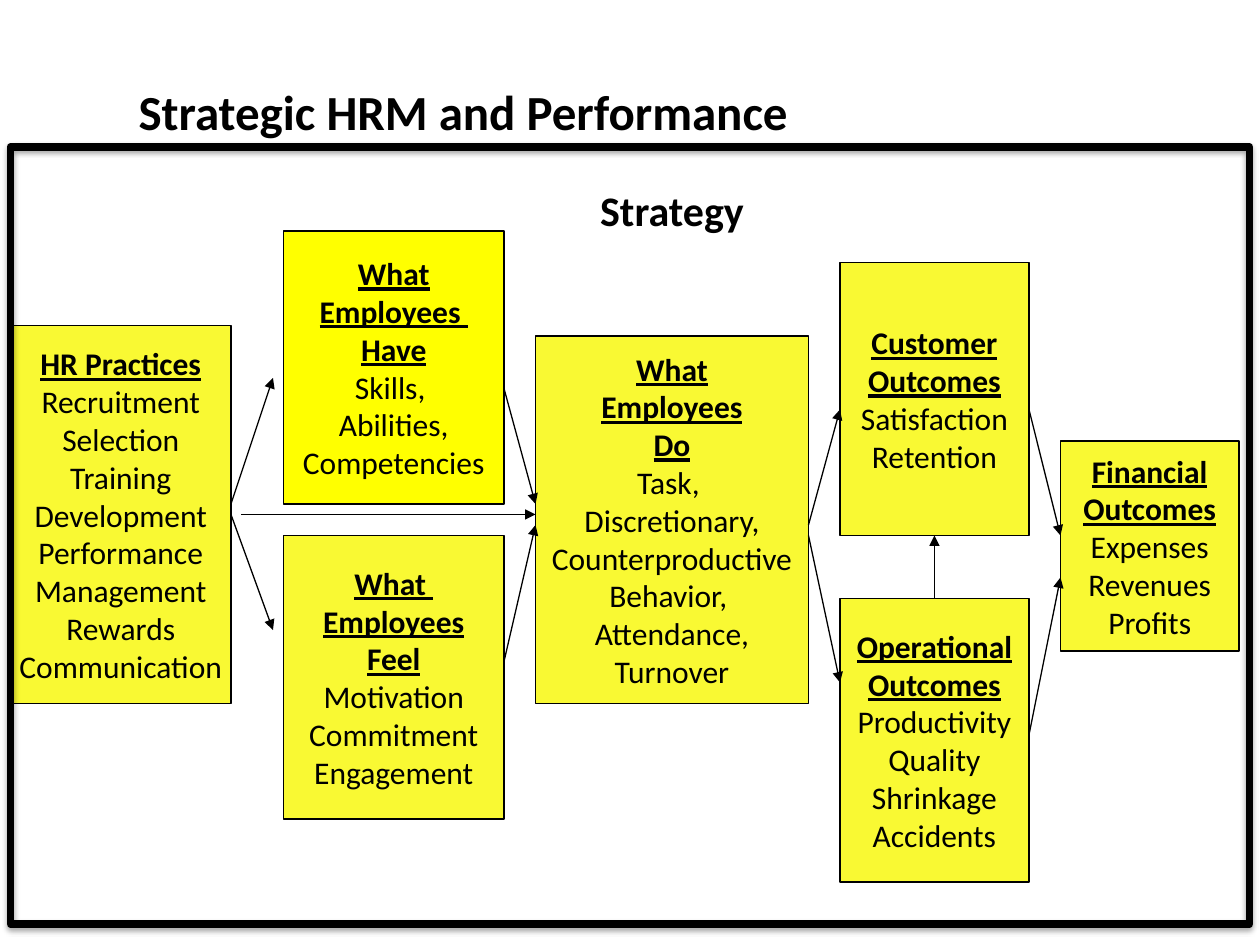
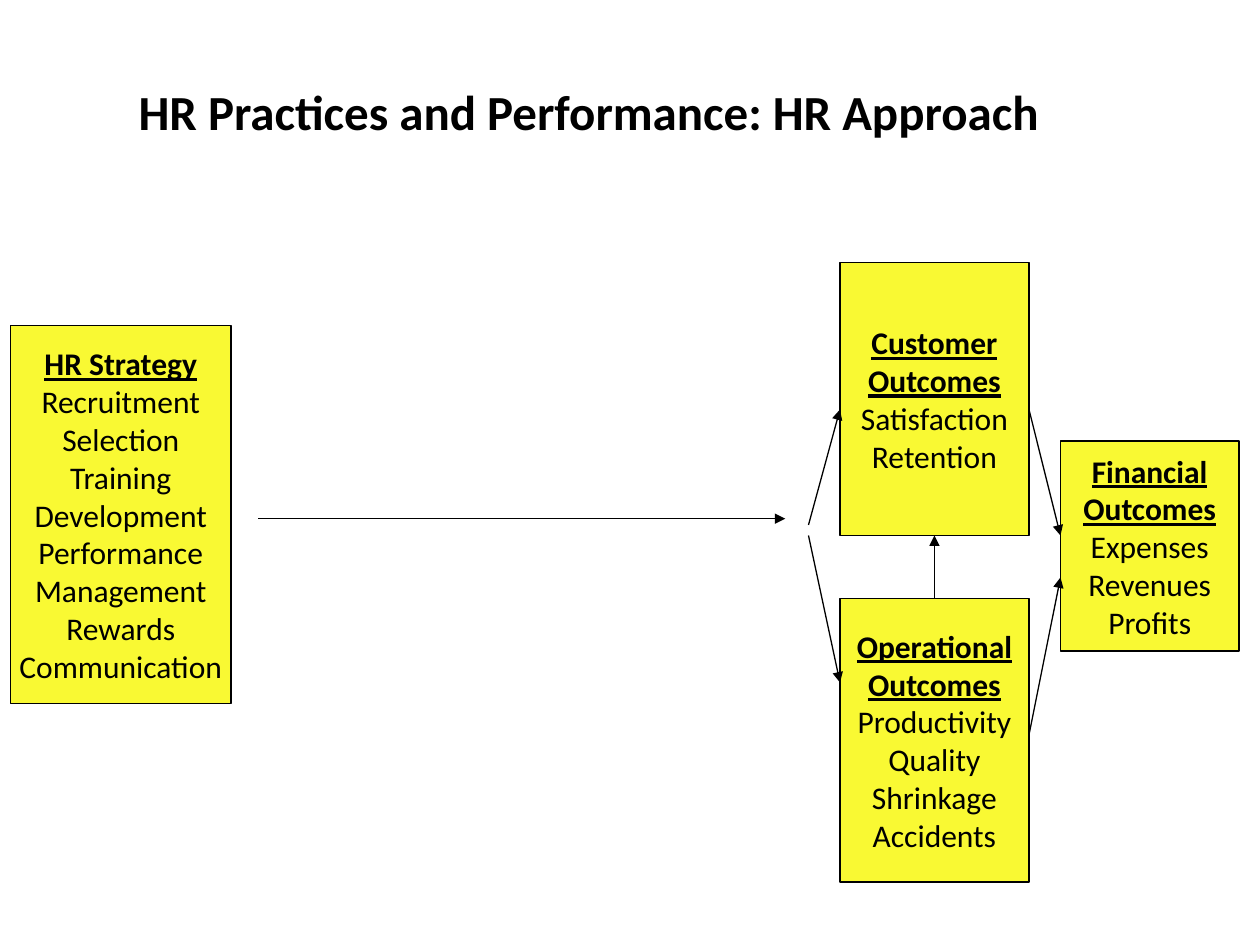
from dataclasses import dataclass

from lxml import etree
from pptx import Presentation
from pptx import util as u
from pptx.dml.color import RGBColor
from pptx.enum import shapes, text
from pptx.oxml.ns import qn


@dataclass(frozen=True)
class Theme:
    """Colours, font, type sizes and line widths of the deck."""
    ink: str = "000000"
    gold: str = "F9F933"
    bright: str = "FFFF00"
    font: str = "Calibri"
    title: int = 28
    label: int = 24
    body: int = 18
    thin: float = 0.75
    thick: float = 4.5


THEME = Theme()
WIDTH, HEIGHT = u.Inches(10), u.Inches(7.5)
COLS, ROWS = 120, 90
TITLE = (12, 7.2, 105, 6.8)
HR = (1, 31, 21, 36)
STAFF = (22, 22, 55, 56)
RESULTS = (77, 25, 41, 59)
FRAME = (1, 14, 118, 74)
TASKS = ["Recruitment", "Selection", "Training", "Development", "Performance",
         "Management", "Rewards", "Communication"]


def col(count):
    """Turn grid columns into a length."""
    return u.Emu(round(WIDTH * count / COLS))


def row(count):
    """Turn grid rows into a length."""
    return u.Emu(round(HEIGHT * count / ROWS))


def rect(box):
    """Turn a grid box into left, top, width and height."""
    x, y, w, h = box
    return col(x), row(y), col(w), row(h)


def shift(area, box):
    """Move a box from the corner of its area to the slide's grid."""
    return (area[0] + box[0], area[1] + box[1], *box[2:])


def write(frame, lines, size=THEME.body, bold=False, heads=0, wrap=True,
          align=text.PP_ALIGN.CENTER, anchor=text.MSO_ANCHOR.TOP):
    """Fill a text frame; the first heads lines are bold and underlined."""
    frame.word_wrap = wrap
    frame.auto_size = text.MSO_AUTO_SIZE.NONE
    frame.vertical_anchor = anchor
    for i, line in enumerate(lines):
        para = frame.paragraphs[0] if i == 0 else frame.add_paragraph()
        para.alignment = align
        run = para.add_run()
        run.text = line
        font = run.font
        font.name, font.size = THEME.font, u.Pt(size)
        font.bold = bold or i < heads
        font.underline = i < heads
        font.color.rgb = RGBColor.from_string(THEME.ink)


def block(slide, box, fill=None, width=THEME.thin):
    """Add an outlined rectangle, filled if a colour is given."""
    shape = slide.shapes.add_shape(shapes.MSO_SHAPE.RECTANGLE, *rect(box))
    shape.shadow.inherit = False
    if fill:
        shape.fill.solid()
        shape.fill.fore_color.rgb = RGBColor.from_string(fill)
    else:
        shape.fill.background()
    shape.line.color.rgb = RGBColor.from_string(THEME.ink)
    shape.line.width = u.Pt(width)
    return shape


def card(slide, box, heads, items, fill=THEME.gold):
    """Add a box with underlined heading lines over plain items."""
    shape = block(slide, box, fill)
    write(shape.text_frame, heads + items, heads=len(heads), wrap=False,
          anchor=text.MSO_ANCHOR.MIDDLE)


def sites(shape):
    """List the side middles of a shape: top, left, bottom, right."""
    x, y, w, h = shape.left, shape.top, shape.width, shape.height
    return [(x + w // 2, y), (x, y + h // 2), (x + w // 2, y + h), (x + w, y + h // 2)]


def arrow(slide, area, start, end):
    """Draw an arrow within an area, joined to any side middle it meets."""
    ends = [(col(area[0] + x), row(area[1] + y)) for x, y in (start, end)]
    nodes = [s for s in slide.shapes
             if s.shape_type == shapes.MSO_SHAPE_TYPE.AUTO_SHAPE]
    line = slide.shapes.add_connector(shapes.MSO_CONNECTOR.STRAIGHT, *ends[0], *ends[1])
    line.line.color.rgb = RGBColor.from_string(THEME.ink)
    line.line.width = u.Pt(THEME.thin)
    props = line.line._get_or_add_ln()
    etree.SubElement(props, qn("a:tailEnd"), type="triangle")
    etree.SubElement(props.getparent(), qn("a:effectLst"))
    for node in nodes:
        for i, site in enumerate(sites(node)):
            if site == ends[0]:
                line.begin_connect(node, i)
            if site == ends[1]:
                line.end_connect(node, i)


def shade(shape):
    """Give a shape a soft shadow straight below it."""
    list_ = shape._element.spPr.find(qn("a:effectLst"))
    outer = etree.SubElement(list_, qn("a:outerShdw"), blurRad=str(u.Pt(3.1)),
                             dist=str(u.Pt(1.8)), dir="5400000", rotWithShape="0")
    tint = etree.SubElement(outer, qn("a:srgbClr"), val=THEME.ink)
    etree.SubElement(tint, qn("a:alpha"), val="35000")


def start(deck, title):
    """Add a slide with its title."""
    slide = deck.slides.add_slide(deck.slide_layouts[5])
    head = slide.shapes.title
    head.left, head.top, head.width, head.height = rect(TITLE)
    write(head.text_frame, [title], size=THEME.title, bold=True,
          align=text.PP_ALIGN.LEFT)
    return slide


def staff(slide, area):
    """Place what employees have, feel and do, with their arrows."""
    card(slide, shift(area, (5, 0, 21, 26)), ["What", "Employees ", "Have"],
         ["Skills, ", "Abilities,", "Competencies"], THEME.bright)
    card(slide, shift(area, (5, 29, 21, 27)), ["What ", "Employees", "Feel"],
         ["Motivation", "Commitment", "Engagement"])
    card(slide, shift(area, (29, 10, 26, 35)), ["What", "Employees", "Do"],
         ["Task, ", "Discretionary,", "Counterproductive", "Behavior, ",
          "Attendance,", "Turnover"])
    for ends in [((0, 26), (4, 14)), ((0, 27), (4, 38)), ((1, 27), (29, 27)),
                 ((26, 15), (29, 26)), ((26, 41), (29, 28))]:
        arrow(slide, area, *ends)


def results(slide, area):
    """Place the three outcome boxes and their arrows."""
    card(slide, shift(area, (3, 0, 18, 26)), ["Customer", "Outcomes"],
         ["Satisfaction", "Retention"])
    card(slide, shift(area, (3, 32, 18, 27)), ["Operational", "Outcomes"],
         ["Productivity", "Quality", "Shrinkage", "Accidents"])
    card(slide, shift(area, (24, 17, 17, 20)), ["Financial", "Outcomes"],
         ["Expenses", "Revenues", "Profits"])
    for ends in [((0, 25), (3, 14)), ((0, 26), (3, 40)), ((12, 32), (12, 26)),
                 ((21, 14), (24, 26)), ((21, 45), (24, 30))]:
        arrow(slide, area, *ends)


def border(slide, area):
    """Draw the heavy strategy frame and its label."""
    shade(block(slide, area, width=THEME.thick))
    label = slide.shapes.add_textbox(*rect(shift(area, (50, 3, 26, 6))))
    write(label.text_frame, ["Strategy"], size=THEME.label, bold=True)


def main():
    """Build both slides and save the deck."""
    deck = Presentation()
    deck.slide_width, deck.slide_height = WIDTH, HEIGHT
    full = start(deck, "Strategic HRM and Performance")
    card(full, HR, ["HR Practices"], TASKS)
    staff(full, STAFF)
    results(full, RESULTS)
    border(full, FRAME)
    brief = start(deck, "HR Practices and Performance: HR Approach")
    card(brief, HR, ["HR Strategy"], TASKS)
    arrow(brief, HR, (23.6, 18.4), (73.8, 18.4))
    results(brief, RESULTS)
    deck.save("out.pptx")


if __name__ == "__main__":
    main()
